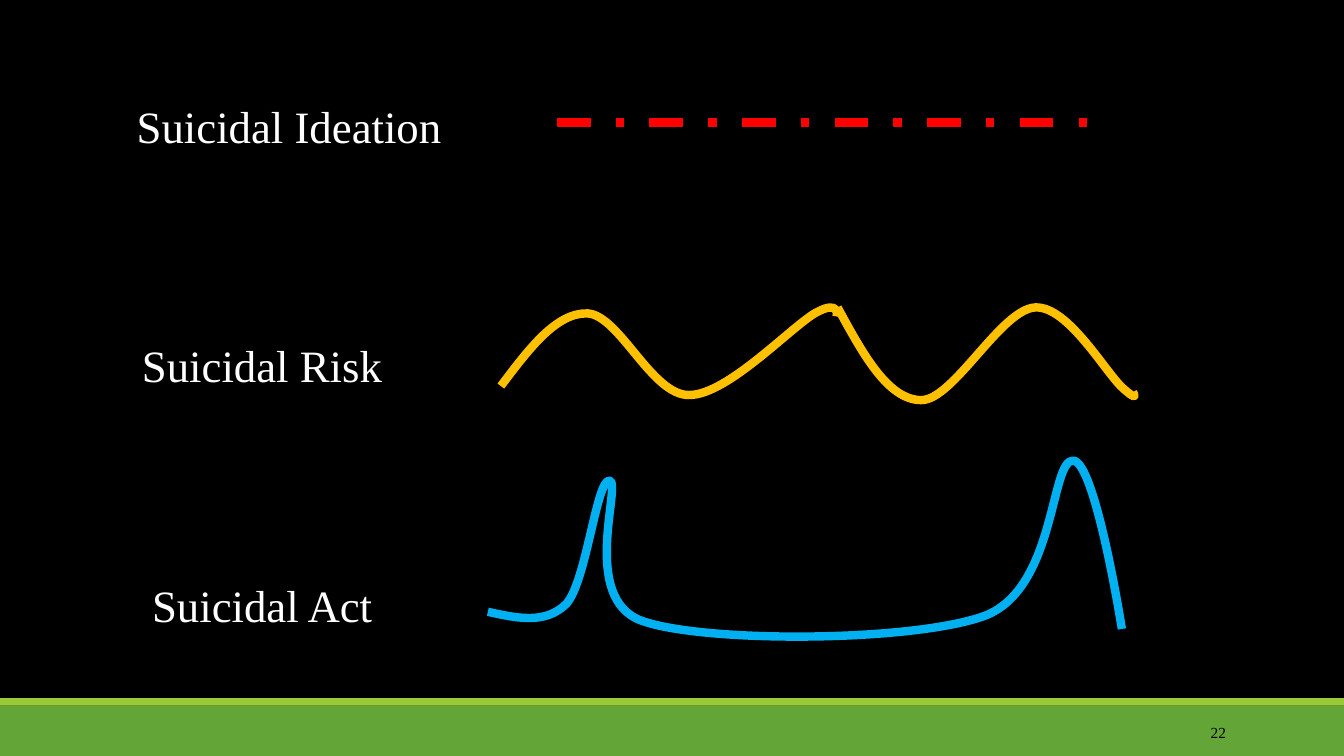
import pptx
import pptx.util
import pptx.dml.color
import pptx.enum.dml
import pptx.enum.shapes
import pptx.enum.text
import pptx.oxml.ns
import lxml.etree

Pt = pptx.util.Pt
qn = pptx.oxml.ns.qn
RGBColor = pptx.dml.color.RGBColor
PP_ALIGN = pptx.enum.text.PP_ALIGN
MSO_ANCHOR = pptx.enum.text.MSO_ANCHOR

BLACK = RGBColor(0x00, 0x00, 0x00)
WHITE = RGBColor(0xFF, 0xFF, 0xFF)
GREEN = RGBColor(0x63, 0xA5, 0x37)
LIME = RGBColor(0x99, 0xCB, 0x38)
RED = RGBColor(0xFF, 0x00, 0x00)
AMBER = RGBColor(0xFF, 0xC0, 0x00)
BLUE = RGBColor(0x00, 0xB0, 0xF0)

RISK_FIRST = [
    (357.8, 275.8),
    (378, 249.1), (397.4, 223.2), (419.8, 223.9),
    (442.8, 225.4), (465.8, 283), (492.5, 282.2),
    (519.8, 282.2), (565.9, 232.6), (583.2, 223.2),
    (600.5, 213.8), (597.6, 226.1), (597.6, 226.1),
]
RISK_SECOND = [
    (598.3, 219.6),
    (616.3, 252.7), (634.3, 285.8), (658.1, 285.8),
    (681.1, 285.8), (715, 221), (739.4, 219.6),
    (763.2, 218.2), (790.6, 267.8), (802.8, 277.9),
    (814.3, 288), (809.3, 280.1), (809.3, 280.1),
]
ACT = [
    (348.5, 437),
    (368.6, 441.4), (389.5, 446.4), (404.6, 431.3),
    (419, 415.4), (426.2, 341.3), (435.6, 343.4),
    (444.2, 345.6), (414, 427.7), (458.6, 443.5),
    (503.3, 459.4), (652.3, 458.6), (703.4, 439.9),
    (754.6, 420.5), (750.2, 327.6), (766.8, 329),
    (782.6, 330.5), (801.4, 449.3), (801.4, 449.3),
]


class Deck:
    font = "Times New Roman"
    stroke = 6

    def __init__(self, s):
        self.s = s

    def background(self, color):
        fill = self.s.background.fill
        fill.solid()
        fill.fore_color.rgb = color

    def bar(self, x, y, w, h, color):
        sp = self.s.shapes.add_shape(
            pptx.enum.shapes.MSO_SHAPE.RECTANGLE, Pt(x), Pt(y), Pt(w), Pt(h))
        sp.shadow.inherit = False
        sp.fill.solid()
        sp.fill.fore_color.rgb = color
        sp.line.fill.background()

    def text(self, text, x, y, w, h, size, color, wrap=True,
             align=PP_ALIGN.LEFT, anchor=MSO_ANCHOR.TOP):
        tf = self.s.shapes.add_textbox(Pt(x), Pt(y), Pt(w), Pt(h)).text_frame
        tf.word_wrap = wrap
        tf.vertical_anchor = anchor
        p = tf.paragraphs[0]
        p.alignment = align
        r = p.add_run()
        r.text = text
        r.font.name = self.font
        r.font.size = Pt(size)
        r.font.color.rgb = color

    def label(self, text, x, y, w, wrap=False):
        self.text(text, x, y, w, 46, 32, WHITE, wrap)

    def dashed_line(self, x1, y1, x2, y2, color):
        cx = self.s.shapes.add_connector(
            pptx.enum.shapes.MSO_CONNECTOR.STRAIGHT, Pt(x1), Pt(y1), Pt(x2), Pt(y2))
        cx.line.color.rgb = color
        cx.line.width = Pt(self.stroke)
        cx.line.dash_style = pptx.enum.dml.MSO_LINE.DASH_DOT
        lxml.etree.SubElement(cx._element.spPr, qn("a:effectLst"))

    def curve(self, points, x, y, w, h, color):
        fb = self.s.shapes.build_freeform(Pt(x), Pt(y))
        fb.add_line_segments([(Pt(x + w), Pt(y + h))], close=False)
        sp = fb.convert_to_shape()
        outline = next(sp._element.iter(qn("a:path")))
        for command in list(outline):
            outline.remove(command)
        commands = [("a:moveTo", points[:1])]
        commands += [("a:cubicBezTo", points[i:i + 3])
                     for i in range(1, len(points), 3)]
        for tag, stops in commands:
            command = lxml.etree.SubElement(outline, qn(tag))
            for px, py in stops:
                lxml.etree.SubElement(command, qn("a:pt"),
                                      x=str(Pt(px - x)), y=str(Pt(py - y)))
        sp.shadow.inherit = False
        sp.fill.background()
        sp.line.color.rgb = color
        sp.line.width = Pt(self.stroke)


def main():
    prs = pptx.Presentation()
    prs.slide_width, prs.slide_height = Pt(960), Pt(540)
    deck = Deck(prs.slides.add_slide(prs.slide_layouts[6]))
    deck.background(BLACK)
    deck.bar(0, 504, 960, 36, GREEN)
    deck.bar(0, 498.7, 960, 5.3, LIME)
    deck.label("Suicidal Ideation", 90.5, 67, 281.5, wrap=True)
    deck.dashed_line(397.8, 87.4, 790.8, 87.4, RED)
    deck.label("Suicidal Risk", 94.3, 238, 188)
    deck.curve(RISK_FIRST, 357.8, 219.6, 239.8, 62.6, AMBER)
    deck.curve(RISK_SECOND, 598.3, 219.6, 211.7, 66.2, AMBER)
    deck.label("Suicidal Act", 101.5, 409, 173.5)
    deck.curve(ACT, 348.5, 329, 453.6, 126, BLUE)
    deck.text("22", 779.8, 508.6, 103, 28.8, 11, BLACK,
              align=PP_ALIGN.RIGHT, anchor=MSO_ANCHOR.MIDDLE)
    prs.save("out.pptx")


if __name__ == "__main__":
    main()
